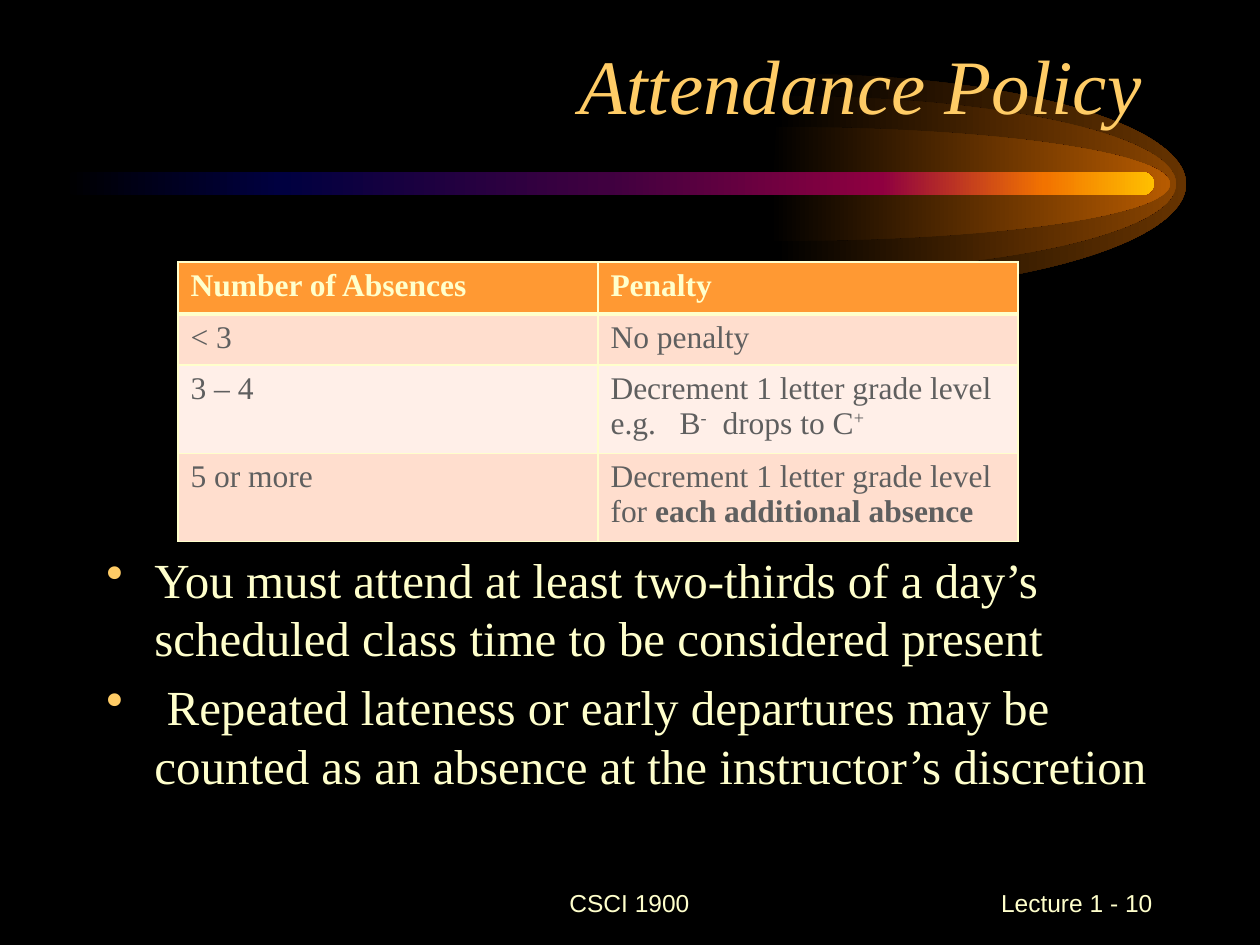
from lxml import etree
from pptx import Presentation
from pptx.dml.color import RGBColor
from pptx.enum.shapes import MSO_SHAPE
from pptx.enum.text import MSO_ANCHOR, PP_ALIGN
from pptx.oxml.ns import qn
from pptx.util import Pt

ROUNDED = MSO_SHAPE.ROUNDED_RECTANGLE
MIDDLE, BOTTOM = MSO_ANCHOR.MIDDLE, MSO_ANCHOR.BOTTOM
LEFT, CENTER, RIGHT = PP_ALIGN.LEFT, PP_ALIGN.CENTER, PP_ALIGN.RIGHT

EMU_PER_PX = 914400 / 126
BLACK, CREAM, GOLD, GRAY = "000000", "FFFFCC", "FFCC66", "5F5F5F"
HEADER_FILL, ROW_FILLS = "FF9933", ("FFDECE", "FFEFE8")
SERIF, SANS = "Times New Roman", "Arial"

COMET_Y = 184
# centre x, vertical radius, colour at the tip
GLOWS = [(792, 110, "663300"), (782, 88, "894400"), (776, 57, "B75B00")]
GLOW_RADIUS_X = 394
ELLIPSE_HANDLE = 0.55
TAIL_STOPS = [(0, BLACK), (20, "000040"), (50, "400040"),
              (75, "8F0040"), (90, "F27300"), (100, "FFBF00")]

COLUMN_WIDTH = 420
ROW_HEIGHTS = [52, 51, 88, 88]
SUPERSCRIPT, BOLD = "superscript", "bold"
# each cell is a list of paragraphs, each paragraph a list of (text, style)
ROWS = [
    ([[("Number of Absences", BOLD)]], [[("Penalty", BOLD)]]),
    ([[("< 3", None)]], [[("No penalty", None)]]),
    ([[("3 – 4", None)]],
     [[("Decrement 1 letter grade level", None)],
      [("e.g.   B", None), ("-", SUPERSCRIPT),
       ("  drops to C", None), ("+", SUPERSCRIPT)]]),
    ([[("5 or more", None)]],
     [[("Decrement 1 letter grade level for ", None),
       ("each additional absence", BOLD)]]),
]
BULLETS = [
    "You must attend at least two-thirds of a day’s scheduled class time "
    "to be considered present",
    " Repeated lateness or early departures may be counted as an absence "
    "at the instructor’s discretion",
]


def px(value):
    return round(value * EMU_PER_PX)


def color(hex_string):
    return RGBColor.from_string(hex_string)


def set_values(target, values):
    for name, value in values.items():
        setattr(target, name, value)


def place(shape, left, top, width, height):
    set_values(shape, {"left": px(left), "top": px(top),
                       "width": px(width), "height": px(height)})


def add_run(paragraph, text, size, font_name, hex_string, **styles):
    run = paragraph.add_run()
    run.text = text
    set_values(run.font, {"size": Pt(size), "name": font_name, **styles})
    run.font.color.rgb = color(hex_string)
    return run


def fill_gradient(shape, stops):
    """Fill from left to right with (percent, colour) stops, without outline."""
    shape.shadow.inherit = False
    shape.line.fill.background()
    shape.fill.gradient()
    shape.fill.gradient_angle = 0
    stop_list = shape._element.spPr.find(qn("a:gradFill")).find(qn("a:gsLst"))
    for old_stop in list(stop_list):
        stop_list.remove(old_stop)
    for percent, hex_string in stops:
        stop = etree.SubElement(stop_list, qn("a:gs"), pos=str(percent * 1000))
        etree.SubElement(stop, qn("a:srgbClr"), val=hex_string)


def curve_segments(shape, curve_count):
    """Turn each of the first triples of line segments into a Bézier curve."""
    path = next(shape._element.iter(qn("a:path")))
    lines = path.findall(qn("a:lnTo"))
    for start in range(0, 3 * curve_count, 3):
        curve = etree.Element(qn("a:cubicBezTo"))
        lines[start].addprevious(curve)
        for line in lines[start:start + 3]:
            curve.append(line[0])
            path.remove(line)


def add_glow(slide, center_x, radius_y, hex_string):
    """Add the right half of an ellipse, fading to black at its flat side."""
    handle_x = center_x + GLOW_RADIUS_X * ELLIPSE_HANDLE
    handle_y = radius_y * ELLIPSE_HANDLE
    tip_x = center_x + GLOW_RADIUS_X
    outline = [(center_x, -radius_y), (handle_x, -radius_y), (tip_x, -handle_y),
               (tip_x, 0), (tip_x, handle_y), (handle_x, radius_y),
               (center_x, radius_y), (center_x - 6, radius_y)]
    points = [(px(x), px(COMET_Y + y)) for x, y in outline]
    builder = slide.shapes.build_freeform(*points[0])
    builder.add_line_segments(points[1:], close=True)
    glow = builder.convert_to_shape()
    curve_segments(glow, 2)
    fill_gradient(glow, [(0, BLACK), (100, hex_string)])


def add_comet(slide):
    for glow in GLOWS:
        add_glow(slide, *glow)
    tail = slide.shapes.add_shape(ROUNDED, 0, 0, 0, 0)
    place(tail, 63, 172, 1091, 23)
    tail.adjustments[0] = 0.5
    fill_gradient(tail, TAIL_STOPS)


def format_title(slide, text):
    """Fill the title placeholder and bring it in front of the comet."""
    title = slide.shapes.title
    place(title, 84, 31, 1071, 105)
    set_values(title.text_frame, {"vertical_anchor": BOTTOM, "word_wrap": True})
    paragraph = title.text_frame.paragraphs[0]
    paragraph.alignment = RIGHT
    add_run(paragraph, text, 44, SERIF, GOLD, italic=True)
    slide.shapes._spTree.append(title._element)


def add_text_box(slide, box):
    text_box = slide.shapes.add_textbox(0, 0, 0, 0)
    place(text_box, *box)
    text_box.text_frame.word_wrap = True
    return text_box.text_frame


def add_bullets(slide, texts, box):
    frame = add_text_box(slide, box)
    for index, text in enumerate(texts):
        paragraph = frame.add_paragraph() if index else frame.paragraphs[0]
        set_values(paragraph, {"alignment": LEFT, "space_after": Pt(5.6)})
        properties = paragraph._p.get_or_add_pPr()
        properties.set("marL", str(px(48)))
        properties.set("indent", str(px(-48)))
        bullet_color = etree.SubElement(properties, qn("a:buClr"))
        etree.SubElement(bullet_color, qn("a:srgbClr"), val=GOLD)
        etree.SubElement(properties, qn("a:buChar"), char="•")
        add_run(paragraph, text, 28, SERIF, CREAM)


def add_footer(slide, text, box, alignment):
    frame = add_text_box(slide, box)
    frame.vertical_anchor = MIDDLE
    frame.paragraphs[0].alignment = alignment
    add_run(frame.paragraphs[0], text, 14, SANS, CREAM)


def set_borders(cell, widths):
    """Draw cream cell borders; widths are points for left, right, top, bottom."""
    properties = cell._tc.get_or_add_tcPr()
    for index, (side, width) in enumerate(zip("LRTB", widths)):
        line = etree.Element(qn(f"a:ln{side}"), w=str(Pt(width)))
        fill = etree.SubElement(line, qn("a:solidFill"))
        etree.SubElement(fill, qn("a:srgbClr"), val=CREAM)
        properties.insert(index, line)


def fill_cell(cell, paragraphs, text_color):
    frame = cell.text_frame
    for index, runs in enumerate(paragraphs):
        paragraph = frame.add_paragraph() if index else frame.paragraphs[0]
        for text, style in runs:
            run = add_run(paragraph, text, 18, SERIF, text_color,
                          bold=style == BOLD)
            if style == SUPERSCRIPT:
                run._r.get_or_add_rPr().set("baseline", "30000")


def add_penalty_table(slide, left, top):
    table = slide.shapes.add_table(
        len(ROWS), 2, px(left), px(top),
        px(2 * COLUMN_WIDTH), px(sum(ROW_HEIGHTS))).table
    for row_index, row in enumerate(ROWS):
        table.rows[row_index].height = px(ROW_HEIGHTS[row_index])
        is_header = row_index == 0
        row_fill = HEADER_FILL if is_header else ROW_FILLS[(row_index - 1) % 2]
        top_width = 3 if row_index == 1 else 1
        bottom_width = 3 if is_header else 1
        for column_index, paragraphs in enumerate(row):
            cell = table.cell(row_index, column_index)
            cell.fill.solid()
            cell.fill.fore_color.rgb = color(row_fill)
            set_borders(cell, (1, 1, top_width, bottom_width))
            fill_cell(cell, paragraphs, CREAM if is_header else GRAY)


def main():
    presentation = Presentation()
    set_values(presentation, {"slide_width": px(1260), "slide_height": px(945)})
    slide = presentation.slides.add_slide(presentation.slide_layouts[5])
    slide.background.fill.solid()
    slide.background.fill.fore_color.rgb = color(BLACK)
    add_comet(slide)
    format_title(slide, "Attendance Policy")
    add_bullets(slide, BULLETS, (94, 543, 1103, 304))
    add_footer(slide, "CSCI 1900", (430, 871, 399, 63), CENTER)
    add_footer(slide, "Lecture 1 - 10", (903, 871, 262, 63), RIGHT)
    add_penalty_table(slide, 178, 262)
    presentation.save("out.pptx")


if __name__ == "__main__":
    main()
